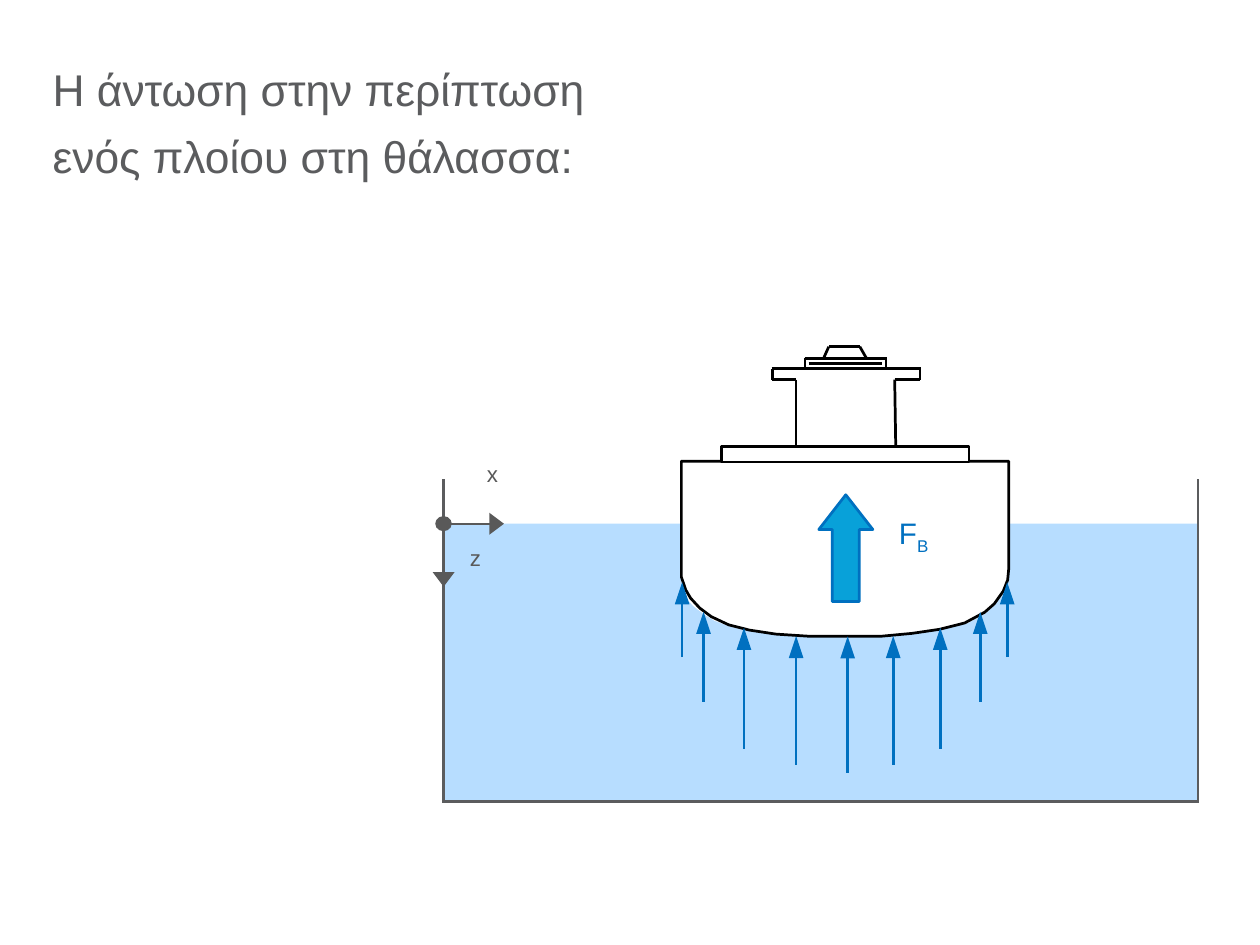
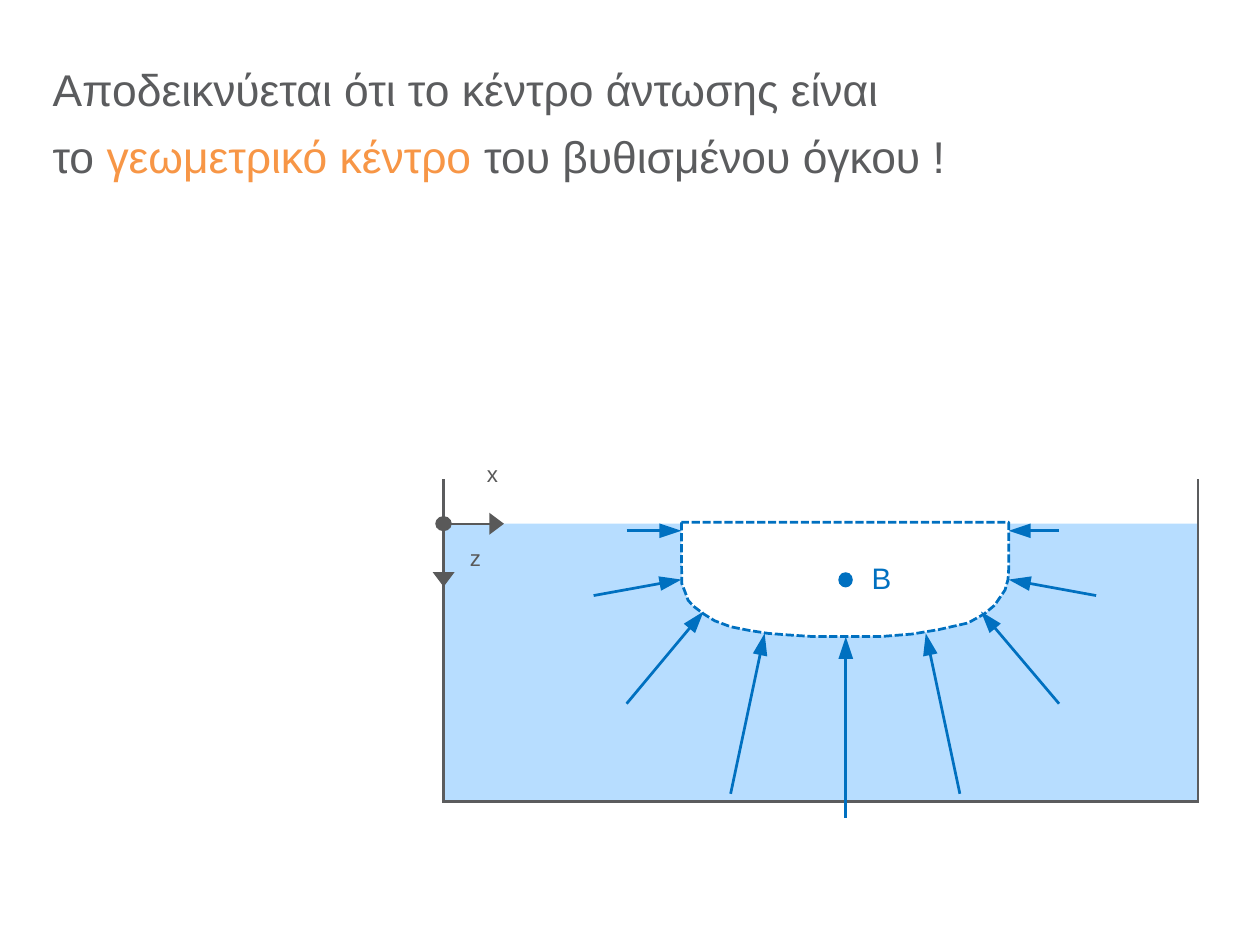
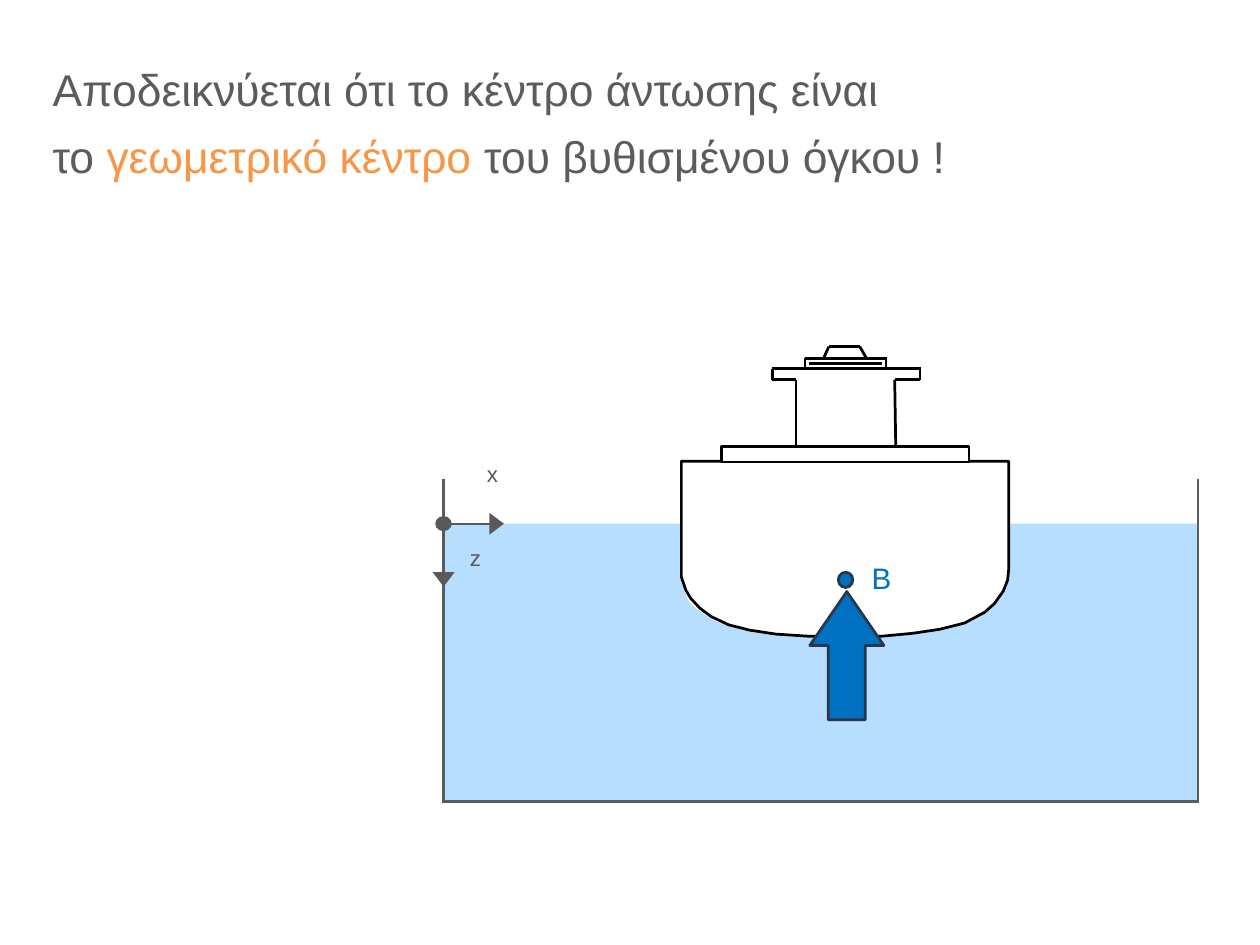
from lxml import etree
from pptx import Presentation
from pptx.dml.color import RGBColor
from pptx.enum import dml, shapes, text
from pptx.oxml import ns
from pptx.util import Pt

GREY = RGBColor(0x5B, 0x5C, 0x5E)
AXIS_GREY = RGBColor(0x59, 0x59, 0x59)
WATER_BLUE = RGBColor(0xB7, 0xDD, 0xFF)
FORCE_BLUE = RGBColor(0x00, 0x70, 0xC0)
BUOYANCY_BLUE = RGBColor(0x08, 0xA1, 0xD9)
NAVY = RGBColor(0x28, 0x37, 0x4A)
ORANGE = RGBColor(0xF7, 0x96, 0x46)
BLACK = RGBColor(0, 0, 0)
WHITE = RGBColor(0xFF, 0xFF, 0xFF)
FONT = "Arial"

LEFT, RIGHT, SURFACE, BOTTOM, RIM = 119.8, 323.5, 141.4, 216.3, 129.4
AXIS_TIPS = [(136.1, SURFACE), (LEFT, 158.4)]
WALLS = [
    (LEFT, RIM, LEFT, BOTTOM + 0.4),
    (RIGHT, RIM, RIGHT, BOTTOM + 0.4),
    (LEFT, BOTTOM, RIGHT + 0.3, BOTTOM),
]
SUBMERGED = [
    (184, 141), (184.1, 157.5), (185, 159.8), (185.8, 162), (187.2, 163.6),
    (190.1, 165.8), (193, 167.6), (197.3, 169.2), (202.3, 170.2), (207.4, 171),
    (212.4, 171.4), (218.9, 171.8), (238.3, 171.8), (246.2, 171.2), (253.4, 170),
    (261.4, 168.2), (265.7, 165.8), (268.6, 163.4), (271.4, 159.3),
    (272.2, 156.5), (272.4, 153.2), (272.4, 141),
]
HULL = [
    (184, 124.5), (184, 155.8), (185.2, 159.3), (186.5, 161.5), (189, 164.2),
    (192.1, 166.5), (196.8, 168.7), (202.4, 170.1), (209.5, 171.2),
    (218.7, 171.8), (237.8, 171.8), (246.3, 171), (253.8, 169.9),
    (260.5, 168.2), (265.9, 165.3), (268.5, 163), (270.9, 159.6),
    (272.1, 156.6), (272.4, 153.4), (272.4, 124.5),
]
SUPERSTRUCTURE = [
    (208.4, 99.5, 248.6, 99.5), (208.7, 99.5, 208.7, 102.7),
    (248.4, 99.5, 248.4, 102.7), (208.4, 102.5, 215, 102.5),
    (241.6, 102.5, 248.4, 102.5), (215, 102.5, 215, 120.5),
    (241.6, 102.5, 241.9, 120.5), (217.3, 96.8, 239.5, 96.8),
    (217.4, 96.8, 217.4, 99.4), (239.3, 96.8, 239.3, 99.4),
    (218.4, 98.2, 238.1, 98.2), (223.8, 93.6, 222.4, 96.8),
    (232.2, 93.6, 234, 96.8), (223.8, 93.6, 232.2, 93.6),
]
DEPTHS = [(177.4, 157.2), (189.5, 165.2), (202.2, 169.5), (206.5, 171.7), (208.6, 171.8)]
VERTICAL_XS = [184.2, 190, 200.9, 215, 228.9, 241.2, 253.9, 264.7, 272]
VERTICAL_FORCES = [
    (x, start, x, tip)
    for x, (start, tip) in zip(VERTICAL_XS, DEPTHS + DEPTHS[-2::-1])
]
NORMAL_FORCES = [
    (169.2, 143.3, 184, 143.3), (286, 143.3, 272.4, 143.3),
    (160.3, 160.8, 184, 156.5), (296, 160.8, 272.4, 156.5),
    (169.2, 190, 190, 165.1), (286, 190, 264.9, 165.1),
    (197.3, 214.3, 206.5, 171), (259.2, 214.3, 250, 171),
    (228.4, 220.8, 228.4, 171.9),
]

SHIP_TITLE = [[("Η άντωση στην περίπτωση ", GREY)], [("ενός πλοίου στη θάλασσα:", GREY)]]
CENTRE_TITLE = [
    [("Αποδεικνύεται ότι το κέντρο άντωσης είναι ", GREY)],
    [("το ", GREY), ("γεωμετρικό κέντρο ", ORANGE), ("του βυθισμένου όγκου !", GREY)],
]
AXIS_LABELS = [
    ("x", "", 121.5, 120.5, 25, 18, 10, 6, AXIS_GREY),
    ("z", "", 116.9, 143.3, 25, 18, 10, 6, AXIS_GREY),
]
FORCE_LABEL = ("F", "B", 242.8, 134.1, 16, 20, 0, 8, FORCE_BLUE)
CENTRE_LABEL = ("B", "", 235.4, 146.4, 29.5, 20, 0, 8, FORCE_BLUE)
SHIP_ARROW = (221.1, 133.6, 14.6, 28.8, 0.644, BUOYANCY_BLUE, FORCE_BLUE)
CENTRE_ARROW = (218.7, 159.7, 20, 34.6, 0.727, FORCE_BLUE, NAVY)

SLIDES = [
    (SHIP_TITLE, True, VERTICAL_FORCES, SHIP_ARROW, False, FORCE_LABEL),
    (CENTRE_TITLE, False, NORMAL_FORCES, None, True, CENTRE_LABEL),
    (CENTRE_TITLE, True, [], CENTRE_ARROW, True, CENTRE_LABEL),
]


def paint(shape, fill=None, line=None, width=0.75):
    shape.shadow.inherit = False
    if fill is None:
        shape.fill.background()
    else:
        shape.fill.solid()
        shape.fill.fore_color.rgb = fill
    if line is None:
        shape.line.fill.background()
    else:
        shape.line.color.rgb = line
        shape.line.width = Pt(width)
    return shape


def draw_line(slide, ends, color, width=0.75, head=None):
    line = slide.shapes.add_connector(
        shapes.MSO_CONNECTOR.STRAIGHT, *[Pt(value) for value in ends])
    line.line.color.rgb = color
    line.line.width = Pt(width)
    if head:
        etree.SubElement(line.line._get_or_add_ln(), ns.qn("a:tailEnd"),
                         type="triangle", w=head[0], len=head[1])
    etree.SubElement(line._element.spPr, ns.qn("a:effectLst"))


prs = Presentation()
prs.slide_width, prs.slide_height = Pt(340.25), Pt(255.12)

for title_lines, has_ship, forces, block_arrow, has_centre, label in SLIDES:
    slide = prs.slides.add_slide(prs.slide_layouts[5])

    title = slide.shapes.title
    title.left, title.top, title.width, title.height = Pt(14.2), Pt(14.2), Pt(312), Pt(34)
    frame = title.text_frame
    frame.margin_left = frame.margin_top = frame.margin_right = frame.margin_bottom = 0
    frame.vertical_anchor = text.MSO_ANCHOR.MIDDLE
    frame.auto_size = text.MSO_AUTO_SIZE.NONE
    frame.word_wrap = True
    heading = frame.paragraphs[0]
    heading.alignment = text.PP_ALIGN.LEFT
    heading.line_spacing = 1.25
    heading.font.name, heading.font.size = FONT, Pt(12)
    for number, title_line in enumerate(title_lines):
        if number:
            heading.add_line_break()
        for words, color in title_line:
            run = heading.add_run()
            run.text = words
            run.font.color.rgb = color

    water = slide.shapes.add_shape(
        shapes.MSO_SHAPE.RECTANGLE, Pt(LEFT), Pt(SURFACE), Pt(RIGHT - LEFT), Pt(BOTTOM - SURFACE))
    paint(water, WATER_BLUE)
    for wall in WALLS:
        draw_line(slide, wall, GREY)
    for tip in AXIS_TIPS:
        draw_line(slide, (LEFT, SURFACE, *tip), AXIS_GREY, 0.5, ("med", "sm"))
    origin = slide.shapes.add_shape(
        shapes.MSO_SHAPE.OVAL, Pt(LEFT - 2.1), Pt(SURFACE - 1.9), Pt(4.2), Pt(3.8))
    paint(origin, AXIS_GREY, AXIS_GREY, 0.25)

    outlines = [(SUBMERGED, WHITE, None if has_ship else FORCE_BLUE)]
    if has_ship:
        outlines.append((HULL, None, BLACK))
    for points, fill, color in outlines:
        corners = [(Pt(x), Pt(y)) for x, y in points]
        builder = slide.shapes.build_freeform(*corners[0])
        builder.add_line_segments(corners[1:], close=True)
        outline = paint(builder.convert_to_shape(), fill, color)
        if color == FORCE_BLUE:
            outline.line.dash_style = dml.MSO_LINE.SQUARE_DOT

    if has_ship:
        for edge in SUPERSTRUCTURE:
            draw_line(slide, edge, BLACK)
        deck = slide.shapes.add_shape(
            shapes.MSO_SHAPE.RECTANGLE, Pt(194.9), Pt(120.6), Pt(66.8), Pt(4.1))
        paint(deck, WHITE, BLACK)

    for force in forces:
        draw_line(slide, force, FORCE_BLUE, head=("sm", "med"))

    if block_arrow:
        *box, head_ratio, fill, color = block_arrow
        buoyancy = slide.shapes.add_shape(
            shapes.MSO_SHAPE.UP_ARROW, *[Pt(value) for value in box])
        buoyancy.adjustments[0] = 0.5
        buoyancy.adjustments[1] = head_ratio
        paint(buoyancy, fill, color)

    if has_centre:
        centre = slide.shapes.add_shape(
            shapes.MSO_SHAPE.OVAL, Pt(226.4), Pt(154.5), Pt(3.9), Pt(4.1))
        paint(centre, FORCE_BLUE, NAVY if has_ship else None)

    for letter, subscript, x, y, width, height, inset, size, color in AXIS_LABELS + [label]:
        caption = slide.shapes.add_textbox(Pt(x), Pt(y), Pt(width), Pt(height)).text_frame
        caption.word_wrap = True
        caption.auto_size = text.MSO_AUTO_SIZE.SHAPE_TO_FIT_TEXT
        caption.margin_left = caption.margin_right = Pt(inset)
        caption.margin_top = caption.margin_bottom = Pt(5)
        paragraph = caption.paragraphs[0]
        paragraph.font.name, paragraph.font.size = FONT, Pt(size)
        paragraph.font.color.rgb = color
        paragraph.add_run().text = letter
        if subscript:
            lowered = paragraph.add_run()
            lowered.text = subscript
            lowered._r.get_or_add_rPr().set("baseline", "-25000")

prs.save("out.pptx")
